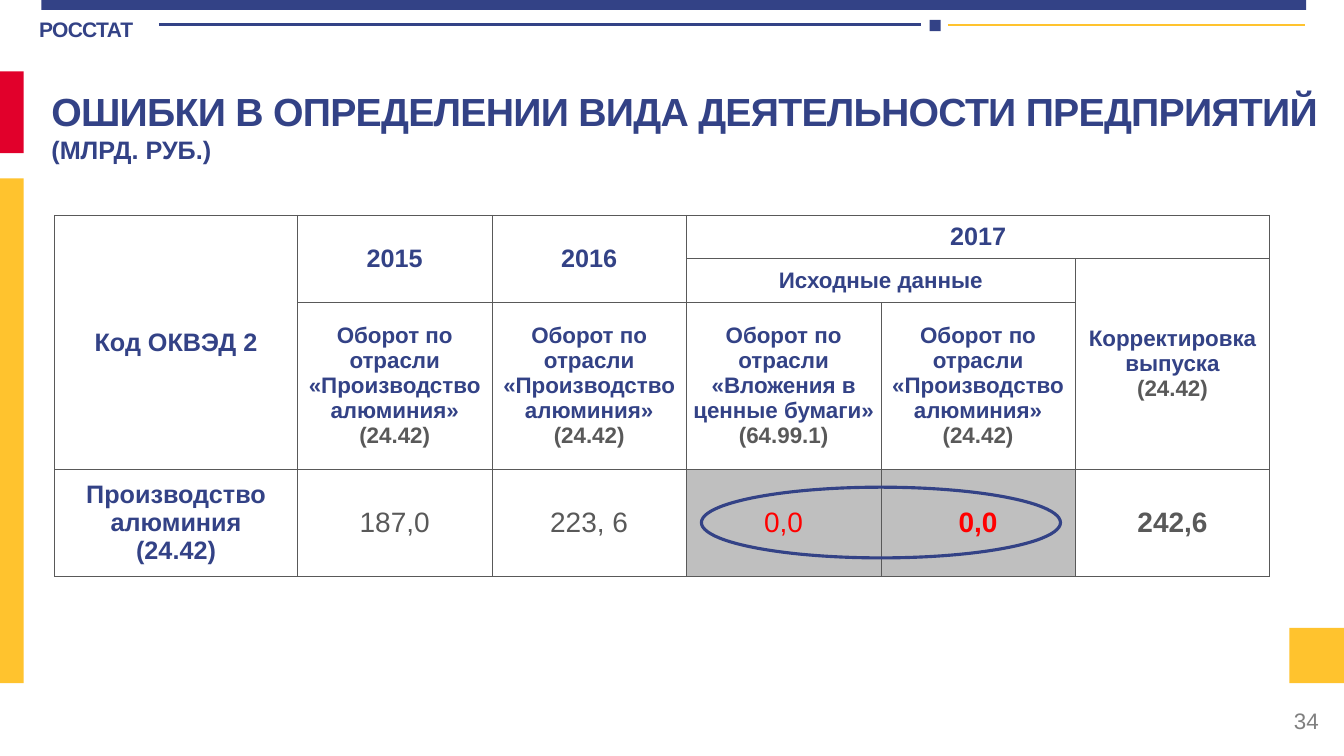
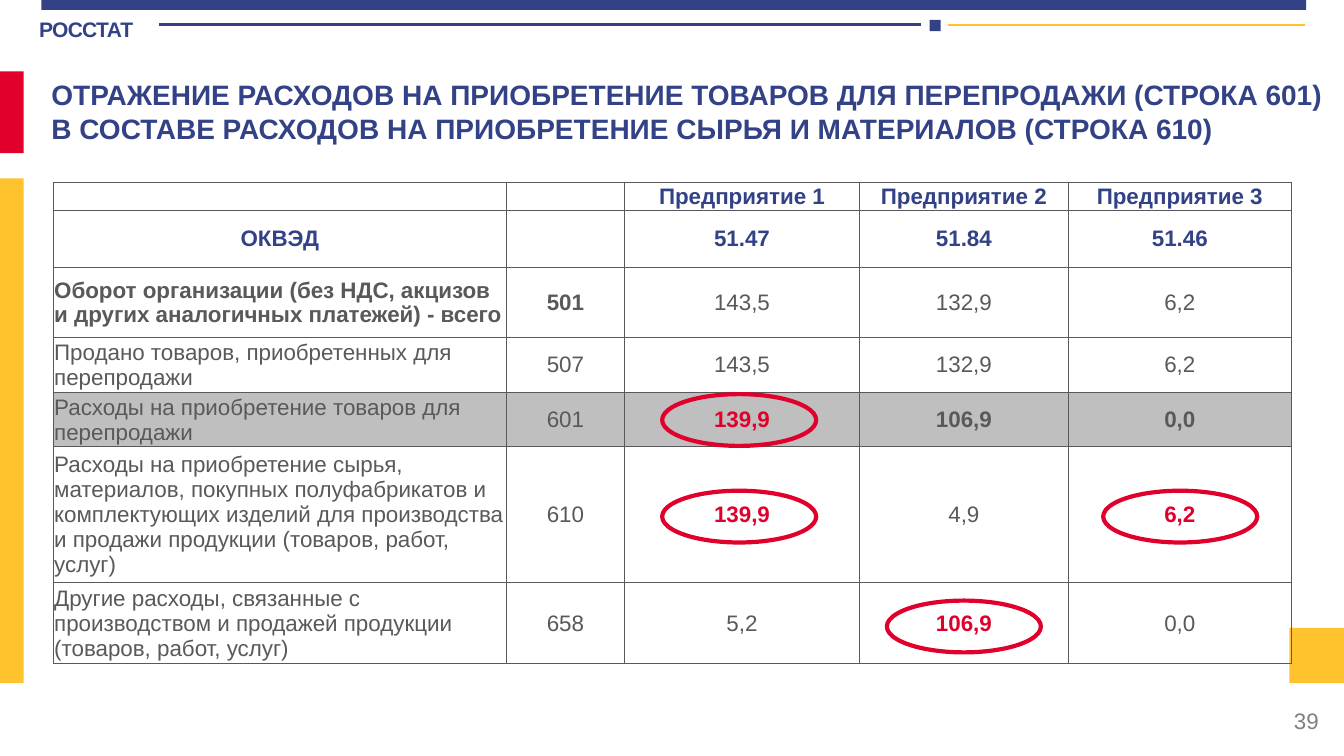
import pptx
import pptx.util
import pptx.dml.color
import pptx.enum.shapes
import pptx.enum.text
import pptx.oxml.ns
import lxml.etree

Pt = pptx.util.Pt
Shape = pptx.enum.shapes.MSO_SHAPE
Align = pptx.enum.text.PP_ALIGN
Mid = pptx.enum.text.MSO_ANCHOR.MIDDLE
qn = pptx.oxml.ns.qn
hues = {"navy": "334286", "red": "E1002B", "gold": "FFC32E", "text": "595959",
        "hot": "FF0000", "band": "BFBFBF", "page": "808080"}


def style(font, size, hue, bold=False):
    font.name = "Arial"
    font.size = Pt(size)
    font.bold = bold
    font.color.rgb = pptx.dml.color.RGBColor.from_string(hues[hue])


def write(cell, text, size, hue, bold, align=Align.CENTER, pad=0, code=None):
    cell.margin_left = cell.margin_right = cell.margin_top = Pt(pad)
    cell.margin_bottom = 0
    cell.vertical_anchor = Mid
    cell.text_frame.text = text
    for para in cell.text_frame.paragraphs:
        para.alignment = align
        if code:
            style(para.runs[0].font, size, hue, bold)
            para.add_line_break()
            run = para.add_run()
            run.text = code
            style(run.font, size, "text", bold)
        else:
            style(para.font, size, hue, bold)


deck = pptx.Presentation()
deck.slide_width, deck.slide_height = Pt(960), Pt(540)

heads = [
    ("34", 58.5, [("ОШИБКИ В ОПРЕДЕЛЕНИИ ВИДА ДЕЯТЕЛЬНОСТИ ПРЕДПРИЯТИЙ ", 28, -50),
                  ("(МЛРД. РУБ.)", 18, 0)]),
    ("39", 52, [("ОТРАЖЕНИЕ РАСХОДОВ НА ПРИОБРЕТЕНИЕ ТОВАРОВ ДЛЯ ПЕРЕПРОДАЖИ (СТРОКА 601) "
                 "В СОСТАВЕ РАСХОДОВ НА ПРИОБРЕТЕНИЕ СЫРЬЯ И МАТЕРИАЛОВ (СТРОКА 610)", 20, 0)]),
]
bars = [(29.5, 0, 903.5, 7, "navy"), (0, 51, 17, 58.5, "red"), (0, 127.5, 17, 360.5, "gold"),
        (921, 448.5, 39, 39.5, "gold"), (664, 14.25, 8, 8, "navy")]
rules = [(113.5, 658, "navy", 2), (677, 932, "gold", 1.5)]
notes = [("РОССТАТ", 28, 9, 83, 23, 15, "navy", True, Align.LEFT, -50),
         (None, 733, 500.5, 216, 29, 16, "page", False, Align.RIGHT, 0)]

for page, top, parts in heads:
    slide = deck.slides.add_slide(deck.slide_layouts[5])
    for x, y, w, h, hue in bars:
        bar = slide.shapes.add_shape(Shape.RECTANGLE, Pt(x), Pt(y), Pt(w), Pt(h))
        bar.shadow.inherit = False
        bar.fill.solid()
        bar.fill.fore_color.rgb = pptx.dml.color.RGBColor.from_string(hues[hue])
        bar.line.fill.background()
    for left, right, hue, width in rules:
        rule = slide.shapes.add_connector(pptx.enum.shapes.MSO_CONNECTOR.STRAIGHT,
                                          Pt(left), Pt(17.75), Pt(right), Pt(17.75))
        rule.line.color.rgb = pptx.dml.color.RGBColor.from_string(hues[hue])
        rule.line.width = Pt(width)
        lxml.etree.SubElement(rule._element.spPr, qn("a:effectLst"))
    for text, x, y, w, h, size, hue, bold, align, gap in notes:
        frame = slide.shapes.add_textbox(Pt(x), Pt(y), Pt(w), Pt(h)).text_frame
        frame.word_wrap = True
        frame.vertical_anchor = Mid
        if text:
            frame.margin_left = frame.margin_right = 0
        para = frame.paragraphs[0]
        para.alignment = align
        run = para.add_run()
        run.text = text or page
        style(para.font, size, hue, bold)
        run._r.get_or_add_rPr().set("spc", str(gap))
    title = slide.shapes.title
    title.left, title.top, title.width, title.height = Pt(29.5), Pt(top), Pt(930.5), Pt(62)
    frame = title.text_frame
    frame.word_wrap = True
    frame.auto_size = pptx.enum.text.MSO_AUTO_SIZE.NONE
    frame.vertical_anchor = pptx.enum.text.MSO_ANCHOR.TOP
    para = frame.paragraphs[0]
    para.alignment = Align.LEFT
    for text, size, gap in parts:
        run = para.add_run()
        run.text = text
        style(run.font, size, "navy", True)
        run._r.get_or_add_rPr().set("spc", str(gap))

grids = []
sizes = [
    (39, 153.75, [173.5] + [138.9] * 5, [31, 31.25, 119.25, 76.5]),
    (38, 130, [323.75, 84.25, 168, 149, 159.5], [18.5, 41, 50, 36, 36, 90, 54]),
]
for slide, (x, y, cols, rows) in zip(deck.slides, sizes):
    grid = slide.shapes.add_table(len(rows), len(cols), Pt(x), Pt(y),
                                  Pt(sum(cols)), Pt(sum(rows))).table
    grid.first_row = grid.horz_banding = False
    for col, width in zip(grid.columns, cols):
        col.width = Pt(width)
    for row, height in zip(grid.rows, rows):
        row.height = Pt(height)
    for cell in grid.iter_cells():
        for side in ("a:lnL", "a:lnR", "a:lnT", "a:lnB"):
            edge = lxml.etree.SubElement(cell._tc.get_or_add_tcPr(), qn(side), w=str(Pt(0.5)))
            fill = lxml.etree.SubElement(edge, qn("a:solidFill"))
            lxml.etree.SubElement(fill, qn("a:srgbClr"), val=hues["text"])
        cell.fill.background()
    grids.append(grid)

grid = grids[0]
for top, left, low, right in [(0, 0, 2, 0), (0, 1, 1, 1), (0, 2, 1, 2),
                              (0, 3, 0, 5), (1, 3, 1, 4), (1, 5, 2, 5)]:
    grid.cell(top, left).merge(grid.cell(low, right))
metal = "Оборот по отрасли «Производство алюминия»"
for row, col, text, size, hue, bold, code in [
    (0, 0, "Код ОКВЭД 2", 18, "navy", True, None),
    (0, 1, "2015", 18, "navy", True, None),
    (0, 2, "2016", 18, "navy", True, None),
    (0, 3, "2017", 18, "navy", True, None),
    (1, 3, "Исходные данные", 16, "navy", True, None),
    (1, 5, "Корректировка выпуска", 16, "navy", True, "(24.42)"),
    (2, 1, metal, 16, "navy", True, "(24.42)"),
    (2, 2, metal, 16, "navy", True, "(24.42)"),
    (2, 3, "Оборот по отрасли «Вложения в ценные бумаги»", 16, "navy", True, "(64.99.1)"),
    (2, 4, metal, 16, "navy", True, "(24.42)"),
    (3, 0, "Производство алюминия\n(24.42)", 18, "navy", True, None),
    (3, 1, "187,0", 20, "text", False, None),
    (3, 2, "223, 6", 20, "text", False, None),
    (3, 3, "0,0", 20, "hot", False, None),
    (3, 4, "0,0", 20, "hot", True, None),
    (3, 5, "242,6", 20, "text", True, None),
]:
    write(grid.cell(row, col), text, size, hue, bold, code=code)

lines = [
    ("", "", "Предприятие 1", "Предприятие 2", "Предприятие 3"),
    ("ОКВЭД", "", "51.47", "51.84", "51.46"),
    ("Оборот организации (без НДС, акцизов и других аналогичных платежей) - всего",
     "501", "143,5", "132,9", "6,2"),
    ("Продано товаров, приобретенных для перепродажи", "507", "143,5", "132,9", "6,2"),
    ("Расходы на приобретение товаров для перепродажи", "601", "139,9", "106,9", "0,0"),
    ("Расходы на приобретение сырья, материалов, покупных полуфабрикатов и комплектующих "
     "изделий для производства и продажи продукции (товаров, работ, услуг)",
     "610", "139,9", "4,9", "6,2"),
    ("Другие расходы, связанные с производством и продажей продукции (товаров, работ, услуг)",
     "658", "5,2", "106,9", "0,0"),
]
alerts = {(4, 2), (5, 2), (5, 4), (6, 3)}
strong = alerts | {(2, 0), (2, 1), (4, 3), (4, 4)}
for row, line in enumerate(lines):
    for col, text in enumerate(line):
        hue = "navy" if row < 2 else "red" if (row, col) in alerts else "text"
        align = Align.LEFT if col == 0 and row > 1 else Align.CENTER
        write(grids[1].cell(row, col), text, 16, hue, row < 2 or (row, col) in strong,
              align, 0.72)

shaded = [grids[0].cell(3, col) for col in (3, 4)] + list(grids[1].rows[4].cells)
for cell in shaded:
    cell.fill.solid()
    cell.fill.fore_color.rgb = pptx.dml.color.RGBColor.from_string(hues["band"])

for page, x, y, w, h, hue, width in [
    (0, 501, 348, 256.5, 50.5, "navy", 2.25),
    (1, 473, 281.5, 110, 37, "red", 3),
    (1, 473, 350.5, 110, 37, "red", 3),
    (1, 633.5, 429, 110, 37, "red", 3),
    (1, 788, 350.5, 110, 37, "red", 3),
]:
    ring = deck.slides[page].shapes.add_shape(Shape.OVAL, Pt(x), Pt(y), Pt(w), Pt(h))
    ring.shadow.inherit = False
    ring.fill.background()
    ring.line.color.rgb = pptx.dml.color.RGBColor.from_string(hues[hue])
    ring.line.width = Pt(width)

deck.save("out.pptx")
